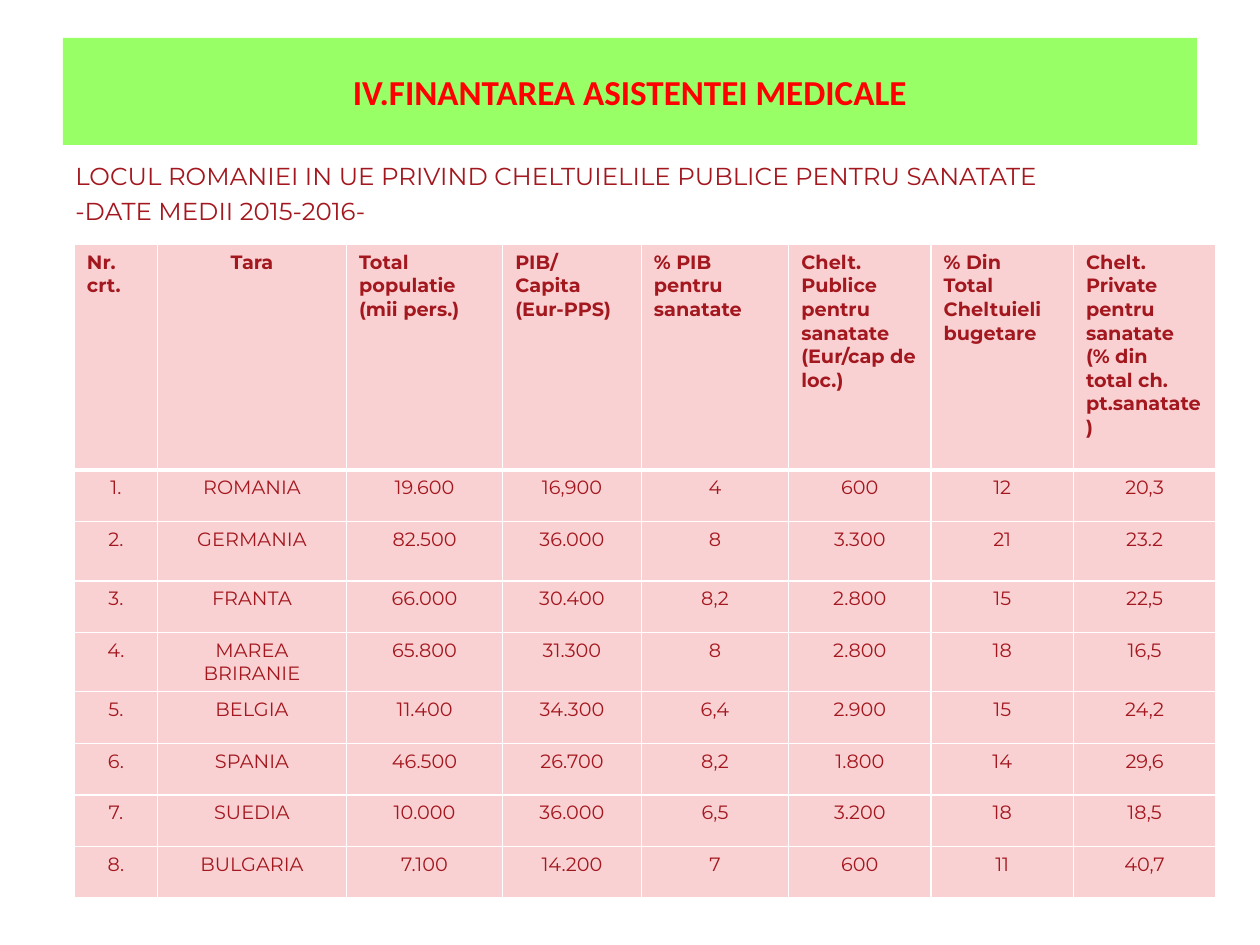
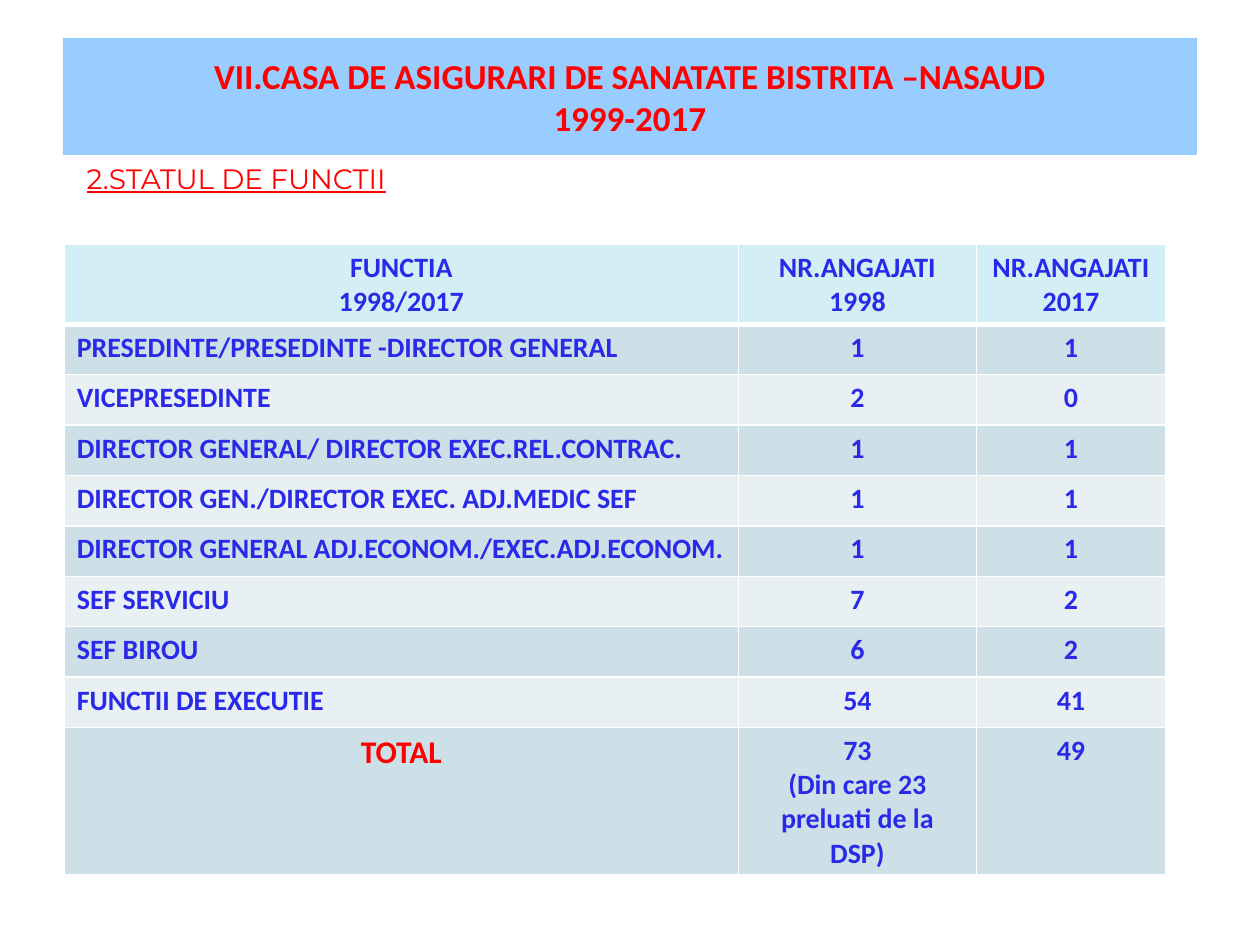
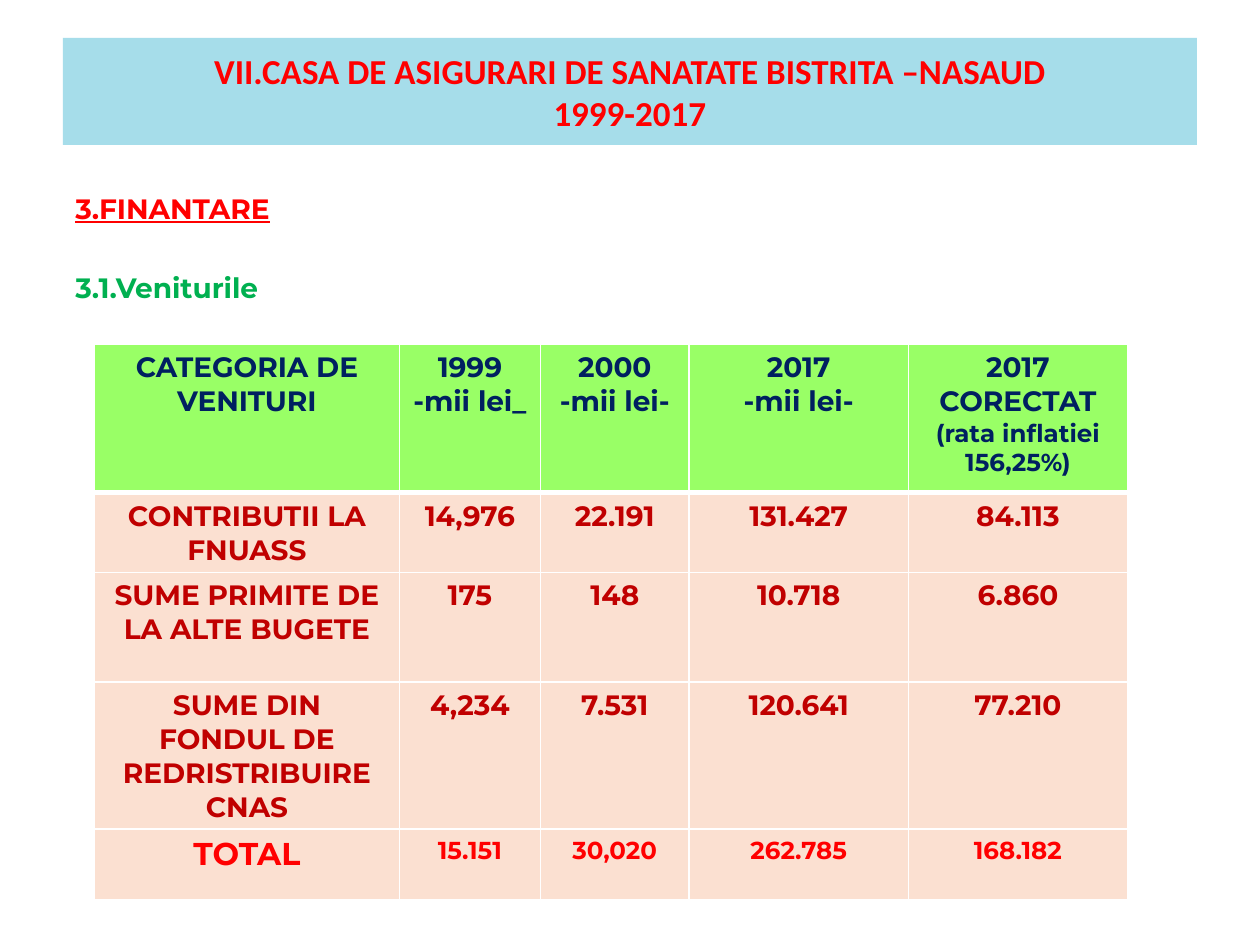
from dataclasses import dataclass, field
from typing import Any, Union

from lxml.etree import SubElement
from pptx import Presentation
from pptx.dml.color import RGBColor
from pptx.enum.shapes import MSO_SHAPE as Preset
from pptx.enum.text import MSO_ANCHOR as Anchor, PP_ALIGN as Align
from pptx.oxml.ns import qn
from pptx.util import Inches, Pt


@dataclass(frozen=True)
class Theme:
    heading_font: str = "Calibri"
    body_font: str = "Montserrat"
    red: str = "FF0000"
    crimson: str = "A3171E"
    dark_red: str = "C00000"
    green: str = "00B050"
    navy: str = "002060"
    blue: str = "2929E9"
    lime: str = "99FF66"
    sky: str = "99CCFF"
    aqua: str = "A6DDEA"
    rose: str = "F9D1D3"
    ice: str = "D3EEF5"
    steel: str = "CDE0E8"
    mist: str = "E8F0F4"
    peach: str = "FBE0D1"
    white: str = "FFFFFF"
    title_size: int = 20
    total_size: int = 18
    large_size: int = 16
    medium_size: int = 14
    small_size: int = 11
    rule: float = 1
    header_rule: float = 3


THEME = Theme()
Look = dict[str, Any]


@dataclass(frozen=True)
class Phrase:
    text: str
    look: Look = field(default_factory=dict)


Entry = Union[str, Phrase, tuple[Phrase, ...]]


@dataclass(frozen=True)
class Band:
    title: str
    color: str
    height: float = 0.85


@dataclass(frozen=True)
class Intro:
    left: float
    top: float
    height: float
    phrases: tuple[Phrase, ...]


@dataclass(frozen=True)
class Grid:
    left: float
    top: float
    widths: tuple[float, ...]
    heights: tuple[float, ...]
    entries: tuple[tuple[Entry, ...], ...]
    header_look: Look
    body_look: Look
    header_fill: str
    body_fills: tuple[str, ...]
    first_column_align: Align = Align.CENTER


@dataclass(frozen=True)
class Page:
    band: Band
    intro: Intro
    grid: Grid


def write_text(frame, text: str, *, font: str = THEME.body_font, size: int = THEME.large_size,
               color: str = THEME.red, bold: bool = False, underline: bool = False,
               align: Align = Align.LEFT, space_before: float = 0,
               soft_breaks: bool = False) -> None:
    for block in [text] if soft_breaks else text.split("\n"):
        paragraph = frame.add_paragraph() if frame.text else frame.paragraphs[0]
        paragraph.alignment = align
        paragraph.space_before = Pt(space_before)
        for index, line in enumerate(block.split("\n")):
            if index:
                paragraph.add_line_break()
            run = paragraph.add_run()
            run.text = line
            run.font.name = font
            run.font.size = Pt(size)
            run.font.bold = bold
            run.font.underline = underline
            run.font.color.rgb = RGBColor.from_string(color)


def draw_band(slide, band: Band) -> None:
    shape = slide.shapes.add_shape(Preset.RECTANGLE, Inches(0.5), Inches(0.3),
                                   Inches(9), Inches(band.height))
    shape.shadow.inherit = False
    shape.fill.solid()
    shape.fill.fore_color.rgb = RGBColor.from_string(band.color)
    shape.line.fill.background()
    shape.text_frame.word_wrap = True
    shape.text_frame.vertical_anchor = Anchor.MIDDLE
    write_text(shape.text_frame, band.title, font=THEME.heading_font, size=THEME.title_size,
               bold=True, align=Align.CENTER, soft_breaks=True)


def draw_intro(slide, intro: Intro) -> None:
    box = slide.shapes.add_textbox(Inches(intro.left), Inches(intro.top),
                                   Inches(9), Inches(intro.height))
    box.text_frame.word_wrap = True
    for phrase in intro.phrases:
        write_text(box.text_frame, phrase.text, **phrase.look)


def draw_borders(cell, top: float, bottom: float) -> None:
    properties = cell._tc.get_or_add_tcPr()
    widths = {"L": THEME.rule, "R": THEME.rule, "T": top, "B": bottom}
    for side, width in widths.items():
        line = SubElement(properties, qn(f"a:ln{side}"), w=str(int(Pt(width))))
        fill = SubElement(line, qn("a:solidFill"))
        SubElement(fill, qn("a:srgbClr"), val=THEME.white)


def fill_cell(cell, entry: Entry, color: str, cell_look: Look) -> None:
    cell.fill.solid()
    cell.fill.fore_color.rgb = RGBColor.from_string(color)
    if isinstance(entry, str):
        entry = Phrase(entry)
    for phrase in entry if isinstance(entry, tuple) else (entry,):
        write_text(cell.text_frame, phrase.text, **{**cell_look, **phrase.look})


def draw_grid(slide, grid: Grid) -> None:
    table = slide.shapes.add_table(
        len(grid.entries), len(grid.widths), Inches(grid.left), Inches(grid.top),
        Inches(sum(grid.widths)), Inches(sum(grid.heights))).table
    table.horz_banding = False
    for column, width in zip(table.columns, grid.widths):
        column.width = Inches(width)
    for r, (entries, height) in enumerate(zip(grid.entries, grid.heights)):
        table.rows[r].height = Inches(height)
        color = grid.body_fills[(r - 1) % len(grid.body_fills)] if r else grid.header_fill
        for c, entry in enumerate(entries):
            cell_look = dict(grid.body_look if r else grid.header_look)
            if r and c == 0:
                cell_look["align"] = grid.first_column_align
            cell = table.cell(r, c)
            draw_borders(cell, THEME.header_rule if r == 1 else THEME.rule,
                         THEME.rule if r else THEME.header_rule)
            fill_cell(cell, entry, color, cell_look)


CENTERED: Look = {"align": Align.CENTER}
TOTAL: Look = {"size": THEME.total_size, "color": THEME.red, "align": Align.CENTER}
TOTAL_SUM: Look = {"size": THEME.medium_size, "color": THEME.red}
COUNTRY: Look = {"size": THEME.small_size, "color": THEME.crimson}
STAFF: Look = {"font": THEME.heading_font, "color": THEME.blue, "bold": True, **CENTERED}
REVENUE: Look = {"color": THEME.dark_red, "bold": True, **CENTERED}
SUBJECT: Look = {"size": THEME.medium_size, "color": THEME.crimson}
INSURANCE_HOUSE = "VII.CASA DE ASIGURARI DE SANATATE BISTRITA –NASAUD\n1999-2017"

SPENDING = Page(
    Band("IV.FINANTAREA ASISTENTEI MEDICALE", THEME.lime),
    Intro(0.5, 1.23, 5.98, (
        Phrase("LOCUL ROMANIEI IN UE PRIVIND CHELTUIELILE PUBLICE PENTRU SANATATE", SUBJECT),
        Phrase("-DATE MEDII 2015-2016-", {**SUBJECT, "space_before": 2.8}))),
    Grid(
        0.59, 1.94,
        (0.66, 1.5, 1.24, 1.1, 1.17, 1.13, 1.13, 1.13),
        (1.79, 0.41, 0.47, 0.41, 0.47, 0.41, 0.41, 0.41, 0.41),
        (
            ("Nr.\ncrt.", Phrase("Tara", CENTERED), "Total populatie\n(mii pers.)",
             "PIB/\nCapita\n(Eur-PPS)", "% PIB\npentru\nsanatate",
             "Chelt.\nPublice\npentru sanatate\n(Eur/cap de loc.)",
             "% Din\nTotal\nCheltuieli\nbugetare",
             "Chelt.\nPrivate\npentru sanatate\n(% din\ntotal ch. pt.sanatate)"),
            ("1.", "ROMANIA", "19.600", "16,900", "4", "600", "12", "20,3"),
            ("2.", "GERMANIA", "82.500", "36.000", "8", "3.300", "21", "23.2"),
            ("3.", "FRANTA", "66.000", "30.400", "8,2", "2.800", "15", "22,5"),
            ("4.", "MAREA BRIRANIE", "65.800", "31.300", "8", "2.800", "18", "16,5"),
            ("5.", "BELGIA", "11.400", "34.300", "6,4", "2.900", "15", "24,2"),
            ("6.", "SPANIA", "46.500", "26.700", "8,2", "1.800", "14", "29,6"),
            ("7.", "SUEDIA", "10.000", "36.000", "6,5", "3.200", "18", "18,5"),
            ("8.", "BULGARIA", "7.100", "14.200", "7", "600", "11", "40,7"),
        ),
        {**COUNTRY, "bold": True}, {**COUNTRY, **CENTERED}, THEME.rose, (THEME.rose,)))

STAFFING = Page(
    Band(INSURANCE_HOUSE, THEME.sky, 0.93),
    Intro(0.59, 1.23, 6.11, (Phrase("2.STATUL DE FUNCTII", {"underline": True}),)),
    Grid(
        0.51, 1.94, (5.35, 1.89, 1.5), (0.6, *[0.4] * 8, 1.11),
        (
            ("FUNCTIA\n1998/2017", "NR.ANGAJATI\n1998", "NR.ANGAJATI\n2017"),
            ("PRESEDINTE/PRESEDINTE -DIRECTOR GENERAL", "1", "1"),
            ("VICEPRESEDINTE", "2", "0"),
            ("DIRECTOR GENERAL/ DIRECTOR EXEC.REL.CONTRAC.", "1", "1"),
            ("DIRECTOR GEN./DIRECTOR EXEC. ADJ.MEDIC SEF", "1", "1"),
            ("DIRECTOR GENERAL ADJ.ECONOM./EXEC.ADJ.ECONOM.", "1", "1"),
            ("SEF SERVICIU", "7", "2"),
            ("SEF BIROU", "6", "2"),
            ("FUNCTII DE EXECUTIE", "54", "41"),
            (Phrase("TOTAL", TOTAL), "73\n(Din care 23 preluati de la DSP)", "49"),
        ),
        STAFF, STAFF, THEME.ice, (THEME.steel, THEME.mist), Align.LEFT))

REVENUES = Page(
    Band(INSURANCE_HOUSE, THEME.aqua),
    Intro(0.5, 1.47, 5.23, (
        Phrase("3.FINANTARE", {"bold": True, "underline": True}),
        Phrase("3.1.Veniturile", {"color": THEME.green, "bold": True, "space_before": 26}))),
    Grid(
        0.75, 2.73, (2.42, 1.12, 1.18, 1.74, 1.74), (1.18, 0.61, 0.87, 1.13, 0.56),
        (
            ("CATEGORIA DE VENITURI", "1999\n-mii lei_", "2000\n-mii lei-", "2017\n-mii lei-",
             (Phrase("2017\nCORECTAT"),
              Phrase("(rata inflatiei 156,25%)", {"size": THEME.medium_size}))),
            ("CONTRIBUTII LA FNUASS", "14,976", "22.191", "131.427", "84.113"),
            ("SUME PRIMITE DE LA ALTE BUGETE", "175", "148", "10.718", "6.860"),
            ("SUME DIN FONDUL DE REDRISTRIBUIRE CNAS", "4,234", "7.531", "120.641", "77.210"),
            (Phrase("TOTAL", TOTAL),
             *(Phrase(amount, TOTAL_SUM) for amount in ("15.151", "30,020", "262.785", "168.182"))),
        ),
        {**REVENUE, "color": THEME.navy}, REVENUE, THEME.lime, (THEME.peach,)))


def main() -> None:
    deck = Presentation()
    deck.slide_width = Inches(10)
    deck.slide_height = Inches(7.5)
    for page in (SPENDING, STAFFING, REVENUES):
        slide = deck.slides.add_slide(deck.slide_layouts[6])
        draw_band(slide, page.band)
        draw_intro(slide, page.intro)
        draw_grid(slide, page.grid)
    deck.save("out.pptx")


if __name__ == "__main__":
    main()
